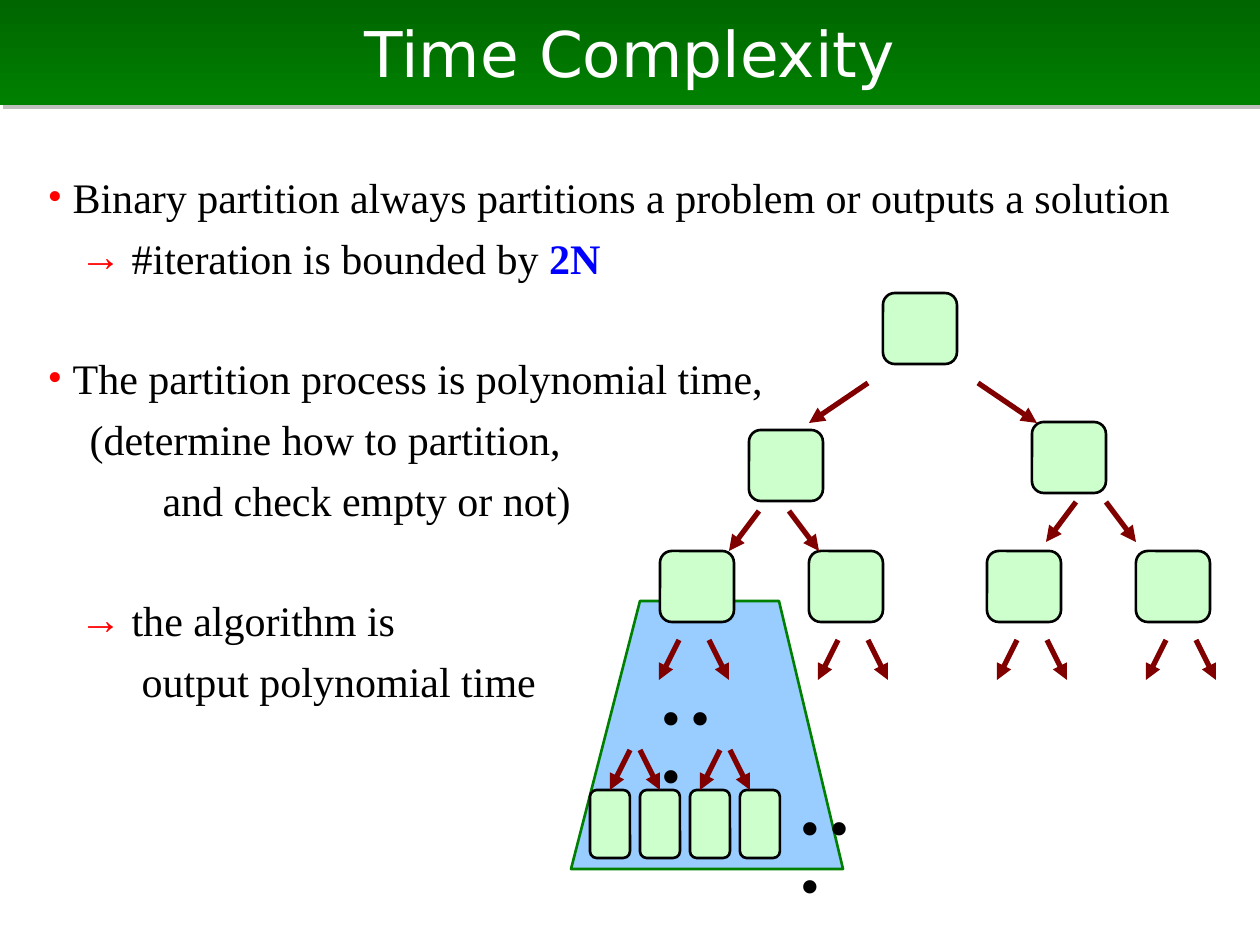
from lxml.etree import SubElement
from pptx import Presentation
from pptx.dml.color import RGBColor
from pptx.enum.shapes import MSO_CONNECTOR as CONNECTOR, MSO_SHAPE as SHAPE
from pptx.enum.text import MSO_ANCHOR as ANCHOR, MSO_AUTO_SIZE as AUTO_SIZE, PP_ALIGN as ALIGN
from pptx.oxml import parse_xml
from pptx.oxml.ns import nsdecls, qn
from pptx.util import Pt

PX = 914400 / 126
SERIF = "Times New Roman"
color = RGBColor.from_string


def write(para, text, size=24, font=SERIF, ink="000000", bold=False):
    span = para.add_run()
    span.text = text
    span.font.size = Pt(size)
    span.font.name = font
    span.font.bold = bold
    span.font.color.rgb = color(ink)


def place(box, *bounds):
    box.left, box.top, box.width, box.height = [round(n * PX) for n in bounds]


deck = Presentation()
deck.slide_width, deck.slide_height = round(1260 * PX), round(945 * PX)
page = deck.slides.add_slide(deck.slide_layouts[1])
title, body = page.placeholders

# Title bar
place(title, 0, 0, 1260, 105)
title.fill.gradient()
title.fill.gradient_angle = 270
for stop, ink in zip(title.fill.gradient_stops, ("006600", "008000")):
    stop.color.rgb = color(ink)
title._element.spPr.append(parse_xml(
    f'<a:effectLst {nsdecls("a")}><a:outerShdw dist="35560" dir="2700000" algn="ctr" rotWithShape="0">'
    '<a:srgbClr val="808080"><a:alpha val="50000"/></a:srgbClr></a:outerShdw></a:effectLst>'))
frame = title.text_frame
frame.auto_size = AUTO_SIZE.NONE
frame.vertical_anchor = ANCHOR.MIDDLE
frame.paragraphs[0].alignment = ALIGN.CENTER
write(frame.paragraphs[0], "Time Complexity", size=36, font="DejaVu Sans", ink="FFFFFF")

# Body: bullet, left margin px, hanging px, space before pt, text, highlighted ending
lines = [
    ("•", 25, 25, 6, "Binary partition always partitions a problem or outputs a solution", ""),
    ("→", 84, 52, 6, "#iteration is bounded by ", "2N"),
    ("•", 25, 25, 40, "The partition process is polynomial time,", ""),
    ("", 42, 0, 6, "(determine how to partition,", ""),
    ("", 115, 0, 6, "and check empty or not)", ""),
    ("→", 84, 52, 40, "the algorithm is", ""),
    ("", 94, 0, 6, "output polynomial time", ""),
]
place(body, 35, 165, 1160, 179)
frame = body.text_frame
frame.auto_size = AUTO_SIZE.NONE
frame.vertical_anchor = ANCHOR.TOP
for index, (bullet, margin, hanging, before, text, ending) in enumerate(lines):
    para = frame.add_paragraph() if index else frame.paragraphs[0]
    para.space_before = Pt(before)
    props = para._p.get_or_add_pPr()
    props.set("marL", str(round(margin * PX)))
    props.set("indent", str(round(-hanging * PX)))
    if bullet:
        SubElement(SubElement(props, qn("a:buClr")), qn("a:srgbClr"), val="FF0000")
        SubElement(props, qn("a:buFont"), typeface=SERIF)
        SubElement(props, qn("a:buChar"), char=bullet)
    else:
        SubElement(props, qn("a:buNone"))
    write(para, text)
    if ending:
        write(para, ending, ink="0000FF", bold=True)

# Highlighted subtree
builder = page.shapes.build_freeform(640, 601, scale=PX)
builder.add_line_segments([(571, 869), (843, 869), (779, 601)])
subtree = builder.convert_to_shape()
subtree.shadow.inherit = False
subtree.fill.solid()
subtree.fill.fore_color.rgb = color("99CCFF")
subtree.line.color.rgb = color("008000")
subtree.line.width = Pt(1.5)

# Tree nodes, remembered by the middle of their top side
nodes = [(left, top, 74, 71) for left, top in [
    (883, 293), (749, 430), (1032, 422), (660, 551), (809, 551), (987, 551), (1136, 551)]]
nodes += [(590 + 50 * i, 790, 40, 68) for i in range(4)]
node_at = {}
for left, top, width, height in nodes:
    node = page.shapes.add_shape(SHAPE.ROUNDED_RECTANGLE, 0, 0, 0, 0)
    place(node, left, top, width, height)
    node.shadow.inherit = False
    node.fill.solid()
    node.fill.fore_color.rgb = color("CCFFCC")
    node.line.color.rgb = color("000000")
    node.line.width = Pt(1.5)
    node_at[left + width // 2, top] = node

# Arrow pairs: centre, top, half gap at the top, half gap at the tips
pairs = [(923, 383, 55, 114), (774, 511, 15, 45), (1091, 502, 15, 45)]
pairs += [(centre, 640, 15, 35) for centre in (694, 853, 1032, 1181)]
pairs += [(centre, 750, 5, 25) for centre in (635, 725)]
for centre, top, inner, outer in pairs:
    for side in (-1, 1):
        tip = (centre + side * outer, top + 40)
        ends = (centre + side * inner, top, *tip)
        arrow = page.shapes.add_connector(CONNECTOR.STRAIGHT, *[round(n * PX) for n in ends])
        if tip in node_at:
            arrow.end_connect(node_at[tip], 0)
        arrow.line.color.rgb = color("800000")
        arrow.line.width = Pt(3)
        SubElement(arrow.line._get_or_add_ln(), qn("a:tailEnd"), type="triangle")
        SubElement(arrow._element.spPr, qn("a:effectLst"))

# Continuation dots
for left, top in [(789, 790), (650, 680)]:
    dots = page.shapes.add_textbox(0, 0, 0, 0)
    place(dots, left, top, 91, 63)
    dots.text_frame.word_wrap = True
    write(dots.text_frame.paragraphs[0], "• • •", size=28, bold=True)

deck.save("out.pptx")
